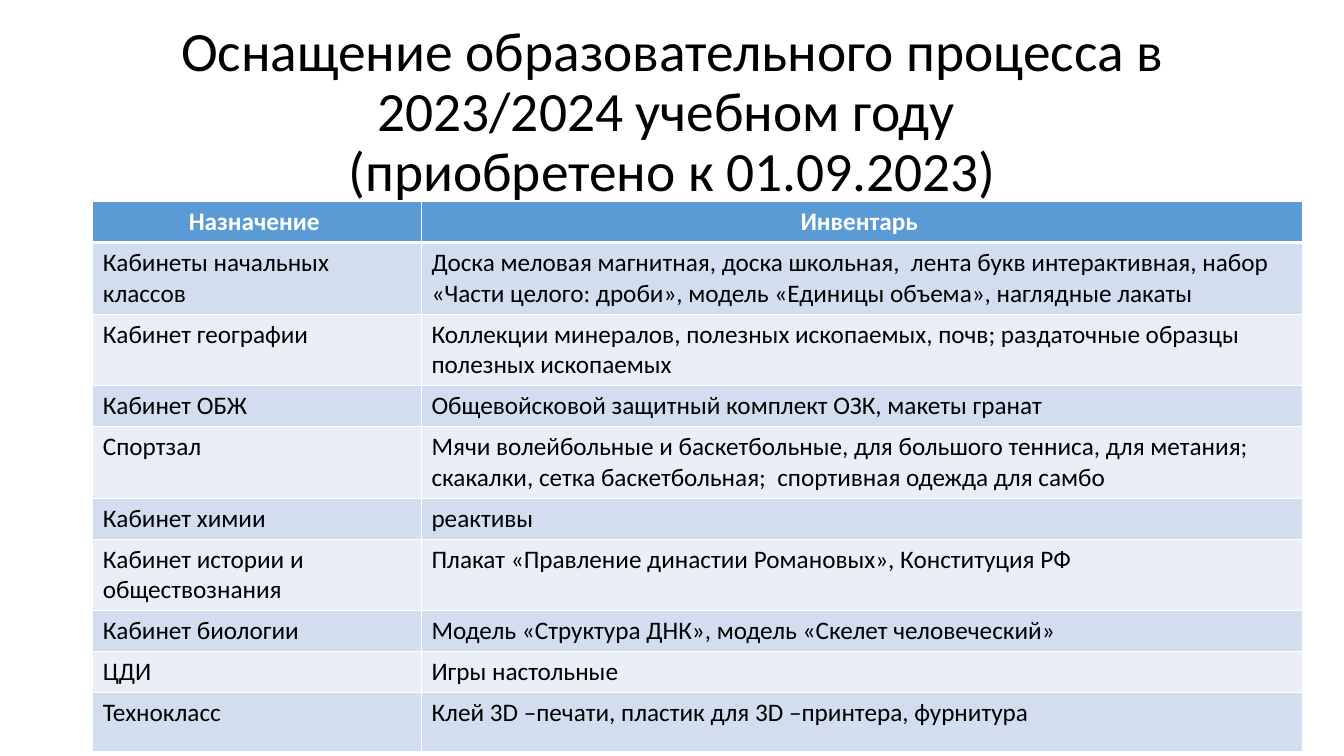
from lxml import etree
from pptx import Presentation
from pptx import util as u
from pptx.dml.color import RGBColor
from pptx.enum import text
from pptx.oxml.ns import qn

COLORS = {
    "black": "000000",
    "white": "FFFFFF",
    "header": "5B9BD5",
    "dark_band": "D2DEEF",
    "light_band": "EAEFF7",
}
TITLE_LINES = [
    "Оснащение образовательного процесса в 2023/2024 учебном году ",
    "(приобретено к 01.09.2023)",
]
COLUMN_WIDTHS = [3.26, 8.74]
EQUIPMENT = [
    (0.38, "Назначение ", "Инвентарь "),
    (0.67, "Кабинеты начальных классов",
     "Доска меловая магнитная, доска школьная,  лента букв интерактивная, набор "
     "«Части целого: дроби», модель «Единицы объема», наглядные лакаты"),
    (0.67, "Кабинет географии",
     "Коллекции минералов, полезных ископаемых, почв; раздаточные образцы "
     "полезных ископаемых"),
    (0.38, "Кабинет ОБЖ", "Общевойсковой защитный комплект ОЗК, макеты гранат"),
    (0.67, "Спортзал",
     "Мячи волейбольные и баскетбольные, для большого тенниса, для метания; "
     "скакалки, сетка баскетбольная;  спортивная одежда для самбо"),
    (0.38, "Кабинет химии", "реактивы"),
    (0.67, "Кабинет истории и обществознания",
     "Плакат «Правление династии Романовых», Конституция РФ"),
    (0.38, "Кабинет биологии",
     "Модель «Структура ДНК», модель «Скелет человеческий»"),
    (0.38, "ЦДИ", "Игры настольные"),
    (0.59, "Технокласс", "Клей 3D –печати, пластик для 3D –принтера, фурнитура"),
]


class SlideBuilder:
    font_name = "Calibri"

    def __init__(self, presentation):
        self.slide = presentation.slides.add_slide(presentation.slide_layouts[5])

    def color(self, name):
        return RGBColor.from_string(COLORS[name])

    def run(self, paragraph, content, size, color, bold=False):
        run = paragraph.add_run()
        run.text = content
        run.font.name = self.font_name
        run.font.size = u.Pt(size)
        run.font.bold = bold
        run.font.color.rgb = self.color(color)

    def title(self, lines, left, top, width, height):
        shape = self.slide.shapes.title
        shape.left, shape.top = u.Inches(left), u.Inches(top)
        shape.width, shape.height = u.Inches(width), u.Inches(height)
        frame = shape.text_frame
        frame.word_wrap = True
        frame.auto_size = text.MSO_AUTO_SIZE.NONE
        frame.vertical_anchor = text.MSO_ANCHOR.MIDDLE
        paragraph = frame.paragraphs[0]
        paragraph.alignment = text.PP_ALIGN.CENTER
        paragraph.line_spacing = 0.9
        for index, line in enumerate(lines):
            if index:
                paragraph.add_line_break()
            self.run(paragraph, line, 39.6, "black")

    def borders(self, cell, top, bottom):
        properties = cell._tc.get_or_add_tcPr()
        for side, points in (("L", 1), ("R", 1), ("T", top), ("B", bottom)):
            line = etree.SubElement(properties, qn(f"a:ln{side}"), w=str(u.Pt(points)))
            fill = etree.SubElement(line, qn("a:solidFill"))
            etree.SubElement(fill, qn("a:srgbClr"), val=COLORS["white"])

    def cell(self, cell, content, row):
        header = row == 0
        self.borders(cell, 3 if row == 1 else 1, 3 if header else 1)
        band = "header" if header else "dark_band" if row % 2 else "light_band"
        cell.fill.solid()
        cell.fill.fore_color.rgb = self.color(band)
        paragraph = cell.text_frame.paragraphs[0]
        paragraph.alignment = text.PP_ALIGN.CENTER if header else text.PP_ALIGN.LEFT
        self.run(paragraph, content, 18, "white" if header else "black", header)

    def table(self, rows, widths, left, top):
        heights = [height for height, *_ in rows]
        table = self.slide.shapes.add_table(
            len(rows), len(widths), u.Inches(left), u.Inches(top),
            u.Inches(sum(widths)), u.Inches(sum(heights))).table
        for column, width in zip(table.columns, widths):
            column.width = u.Inches(width)
        for index, (height, *contents) in enumerate(rows):
            table.rows[index].height = u.Inches(height)
            for cell, content in zip(table.rows[index].cells, contents):
                self.cell(cell, content, index)


def main():
    presentation = Presentation()
    presentation.slide_width = u.Inches(13.33)
    presentation.slide_height = u.Inches(7.5)
    builder = SlideBuilder(presentation)
    builder.title(TITLE_LINES, 0.92, 0.4, 11.5, 1.45)
    builder.table(EQUIPMENT, COLUMN_WIDTHS, 0.92, 2)
    presentation.save("out.pptx")


if __name__ == "__main__":
    main()
